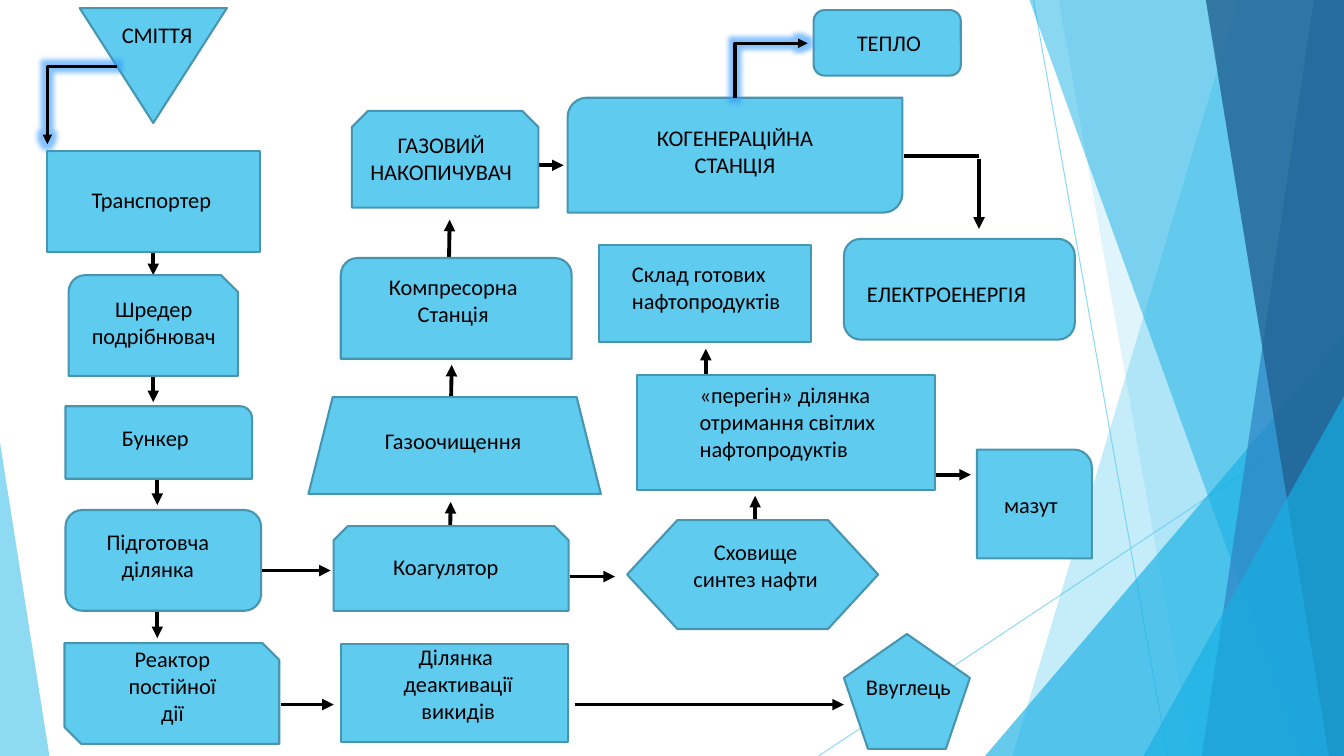
"""Flow chart of waste processing into heat, electricity and oil products."""
from lxml.etree import SubElement
from pptx import Presentation
from pptx.dml.color import RGBColor
from pptx.enum.shapes import MSO_CONNECTOR, MSO_SHAPE
from pptx.enum.text import MSO_AUTO_SIZE, PP_ALIGN
from pptx.oxml.ns import qn
from pptx.util import Inches, Pt

SKY = RGBColor(0x5F, 0xCB, 0xEF)
CYAN = RGBColor(0x17, 0xB0, 0xE4)
BLUE = RGBColor(0x2E, 0x83, 0xC3)
NAVY = RGBColor(0x22, 0x62, 0x92)
EDGE = RGBColor(0x46, 0x96, 0xB1)
BLACK = RGBColor(0, 0, 0)

deck = Presentation()
deck.slide_width, deck.slide_height = Inches(13.33), Inches(7.5)
page = deck.slides.add_slide(deck.slide_layouts[6])


def set_alpha(paint, percent):
    color = paint._xPr.find(qn("a:solidFill"))[0]
    SubElement(color, qn("a:alpha"), val=str(percent * 1000))


def add_line(start, end, color, width, arrow=None, kind=MSO_CONNECTOR.STRAIGHT):
    points = [Inches(value) for value in (*start, *end)]
    line = page.shapes.add_connector(kind, *points)
    line.line.color.rgb = color
    line.line.width = Pt(width)
    if arrow:
        SubElement(line.line._get_or_add_ln(), qn(f"a:{arrow}"), type="triangle")
    effects = SubElement(line._element.spPr, qn("a:effectLst"))
    return line, effects


for start, end in [((10.25, 0), (11.58, 7.5)), ((13.33, 4.03), (8.12, 7.5))]:
    ray, _ = add_line(start, end, SKY, 0.75)
    set_alpha(ray.line.fill, 70)

TRIANGLE = MSO_SHAPE.ISOSCELES_TRIANGLE
backdrop = [
    ("band", (12.28, 10.04), SKY, 36),
    ("band", (10.5, 11.83), SKY, 20),
    ("triangle", (9.77, 3.33, 3.56, 4.17, 1), CYAN, 66),
    ("band", (10.21, 12.91), CYAN, 50),
    ("band", (13.03, 11.92), BLUE, 70),
    ("band", (11.96, 13.18), NAVY, 80),
    ("triangle", (11.34, 3.93, 1.99, 3.57, 1), CYAN, 66),
    ("triangle", (0, 4.39, 0.49, 3.11, 0), SKY, 70),
]
for kind, place, color, alpha in backdrop:
    if kind == "band":
        top, bottom = place
        builder = page.shapes.build_freeform(Inches(top), 0)
        corners = [(13.33, 0), (13.33, 7.5), (bottom, 7.5)]
        builder.add_line_segments([(Inches(x), Inches(y)) for x, y in corners])
        facet = builder.convert_to_shape()
    else:
        *frame, apex = place
        facet = page.shapes.add_shape(TRIANGLE, *map(Inches, frame))
        facet.adjustments[0] = apex
    facet.shadow.inherit = False
    facet.fill.solid()
    facet.fill.fore_color.rgb = color
    set_alpha(facet.fill, alpha)
    facet.line.fill.background()

arrows_behind = [
    ((8.96, 4.71), (9.63, 4.71)), ((7, 4.04), (7, 3.46)),
    ((5.11, 1.64), (5.59, 1.64)), ((4.45, 2.77), (4.46, 2.18)),
    ((4.47, 4.2), (4.48, 3.62)), ((4.46, 5.57), (4.47, 4.98)),
    ((7.49, 5.51), (7.49, 4.92)), ((1.56, 5.87), (1.56, 6.33)),
    ((1.56, 4.55), (1.56, 5.01)), ((1.52, 3.54), (1.52, 3.99)),
    ((1.52, 2.27), (1.52, 2.73)),
]
for start, end in arrows_behind:
    add_line(start, end, BLACK, 2.75, "tailEnd")

stages = [
    (TRIANGLE, 0.79, 0.08, 1.46, 1.14),
    (MSO_SHAPE.RECTANGLE, 0.47, 1.5, 2.11, 1),
    (MSO_SHAPE.SNIP_2_SAME_RECTANGLE, 3.49, 1.1, 1.85, 0.96),
    (MSO_SHAPE.ROUND_2_DIAG_RECTANGLE, 5.63, 0.97, 3.32, 1.14),
    (MSO_SHAPE.ROUNDED_RECTANGLE, 8.07, 0.1, 1.46, 0.65),
    (MSO_SHAPE.ROUNDED_RECTANGLE, 8.37, 2.37, 2.29, 1),
    (MSO_SHAPE.SNIP_ROUND_RECTANGLE, 0.68, 2.73, 1.68, 1),
    (MSO_SHAPE.ROUND_1_RECTANGLE, 0.65, 4.03, 1.85, 0.72),
    (MSO_SHAPE.ROUNDED_RECTANGLE, 0.65, 5.06, 1.94, 1),
    (MSO_SHAPE.TRAPEZOID, 3.06, 3.94, 2.9, 0.96),
    (MSO_SHAPE.ROUND_2_SAME_RECTANGLE, 3.38, 2.56, 2.29, 1),
    (MSO_SHAPE.SNIP_2_DIAG_RECTANGLE, 0.64, 6.38, 2.13, 1),
    (MSO_SHAPE.RECTANGLE, 3.38, 6.39, 2.25, 0.97),
    (MSO_SHAPE.REGULAR_PENTAGON, 8.37, 6.29, 1.25, 1.14),
    (MSO_SHAPE.SNIP_2_SAME_RECTANGLE, 3.31, 5.22, 2.33, 0.84),
    (MSO_SHAPE.FLOWCHART_PREPARATION, 6.22, 5.16, 2.49, 1.08),
    (MSO_SHAPE.RECTANGLE, 6.32, 3.72, 2.95, 1.14),
    (MSO_SHAPE.RECTANGLE, 5.94, 2.43, 2.1, 0.96),
    (MSO_SHAPE.ROUND_1_RECTANGLE, 9.69, 4.46, 1.14, 1.08),
]
for kind, *frame in stages:
    stage = page.shapes.add_shape(kind, *map(Inches, frame))
    stage.shadow.inherit = False
    stage.rotation = 180 if kind == TRIANGLE else 0
    stage.fill.solid()
    stage.fill.fore_color.rgb = SKY
    stage.line.color.rgb = EDGE
    stage.line.width = Pt(1.5)

elbows = [
    ((1.16, 0.66), (0.47, 1.43), "tailEnd"),
    ((8.01, 0.43), (7.29, 0.97), "headEnd"),
]
for start, end, arrow in elbows:
    elbow, effects = add_line(start, end, BLACK, 2.25, arrow, MSO_CONNECTOR.ELBOW)
    elbow._element.spPr.find(qn("a:prstGeom")).set("prst", "bentConnector2")
    glow = SubElement(effects, qn("a:glow"), rad=str(Inches(0.1)))
    tint = SubElement(glow, qn("a:srgbClr"), val="3399FF")
    SubElement(tint, qn("a:alpha"), val="60000")

arrows_in_front = [
    ((8.97, 1.55), (9.71, 1.55), None), ((9.71, 1.58), (9.71, 2.27), "tailEnd"),
    ((2.79, 6.99), (3.31, 6.99), "tailEnd"), ((5.7, 6.99), (8.37, 6.99), "tailEnd"),
    ((2.6, 5.66), (3.28, 5.66), "tailEnd"), ((5.65, 5.72), (6.1, 5.72), "tailEnd"),
]
for start, end, arrow in arrows_in_front:
    add_line(start, end, BLACK, 2.75, arrow)

LEFT, CENTER = PP_ALIGN.LEFT, PP_ALIGN.CENTER
labels = [
    ("СМІТТЯ", LEFT, 1.11, 0.16, 1.14, 0.37),
    ("Транспортер", LEFT, 0.81, 1.8, 1.55, 0.37),
    ("Шредер\nподрібнювач", CENTER, 0.72, 2.88, 1.61, 0.64),
    ("Бункер", LEFT, 1.11, 4.16, 1.14, 0.37),
    ("Підготовча ділянка", CENTER, 0.77, 5.19, 1.59, 0.64),
    ("Реактор\nпостійної дії", CENTER, 1.14, 6.35, 1.14, 0.91),
    ("Ділянка \nдеактивації\nвикидів", CENTER, 3.21, 6.33, 2.67, 0.91),
    ("Ввуглець", LEFT, 8.49, 6.63, 1.14, 0.64),
    ("Коагулятор", LEFT, 3.8, 5.44, 1.51, 0.37),
    ("Газоочищення", LEFT, 3.72, 4.19, 1.73, 0.37),
    ("Компресорна\nСтанція", CENTER, 3.65, 2.66, 1.69, 0.64),
    ("ГАЗОВИЙ\nНАКОПИЧУВАЧ", CENTER, 3.43, 1.25, 1.89, 0.64),
    ("КОГЕНЕРАЦІЙНА\nСТАНЦІЯ", CENTER, 6.15, 1.18, 2.28, 0.64),
    ("ТЕПЛО", LEFT, 8.4, 0.24, 1.14, 0.37),
    ("ЕЛЕКТРОЕНЕРГІЯ", LEFT, 8.5, 2.73, 2.07, 0.37),
    ("Сховище\nсинтез нафти", CENTER, 6.71, 5.29, 1.57, 0.91),
    ("«перегін» ділянка\nотримання світлих\nнафтопродуктів", LEFT, 6.84, 3.73, 2.81, 0.91),
    ("Склад готових\nнафтопродуктів", LEFT, 6.17, 2.53, 1.94, 0.64),
    ("мазут", LEFT, 9.86, 4.82, 1.14, 0.37),
]
font_format = {"name": "Calibri", "size": Pt(16)}
for text, alignment, *frame in labels:
    box = page.shapes.add_textbox(*map(Inches, frame))
    box.text_frame.word_wrap = True
    box.text_frame.auto_size = MSO_AUTO_SIZE.SHAPE_TO_FIT_TEXT
    para = box.text_frame.paragraphs[0]
    para.text = text
    para.alignment = alignment
    for span in para.runs:
        for name, value in font_format.items():
            setattr(span.font, name, value)
        span.font.color.rgb = BLACK

deck.save("out.pptx")
